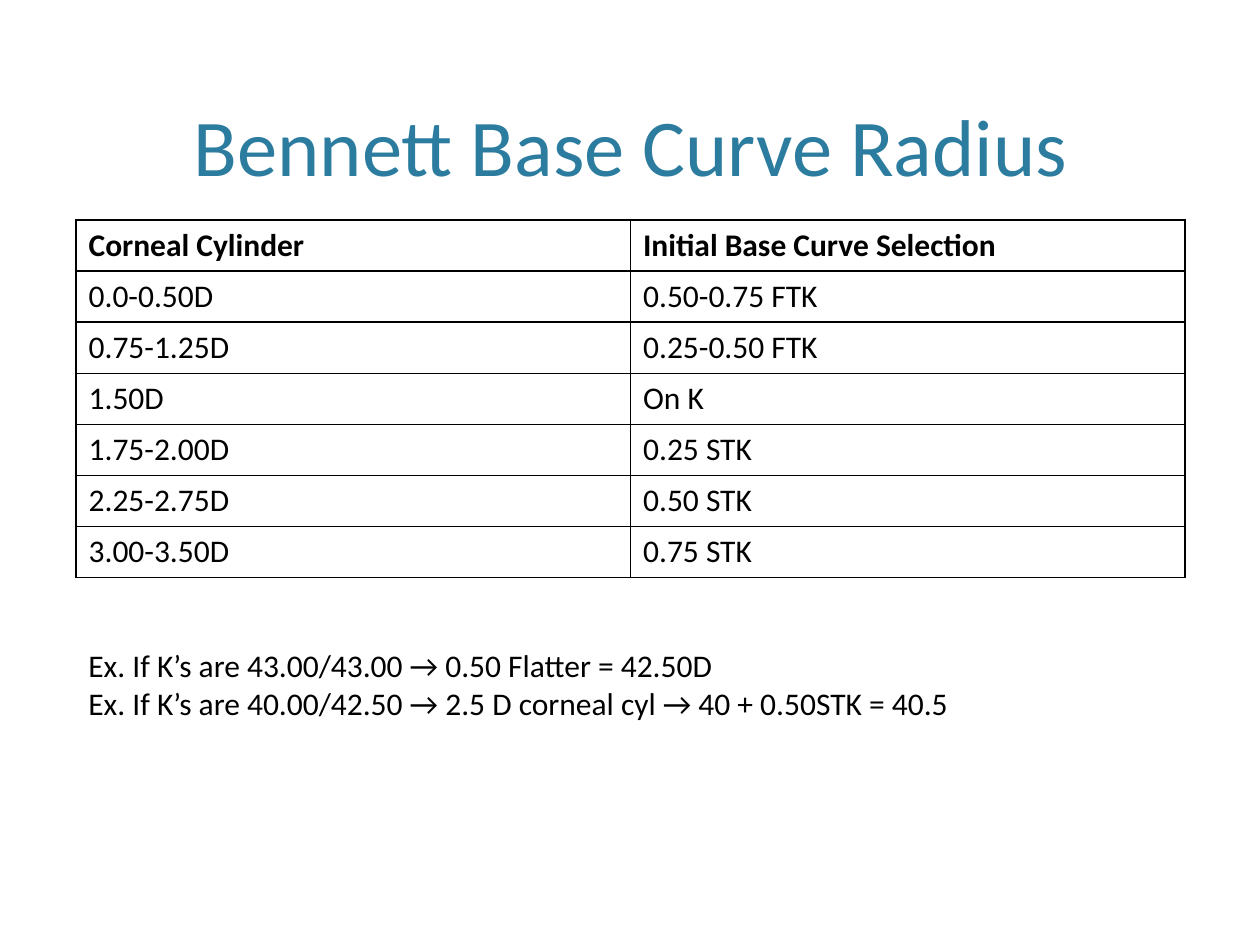
import pptx
import pptx.dml.color
import pptx.enum.text
import pptx.oxml.ns
import pptx.util
from lxml import etree

PX = 914400 / 126
FONT = "Calibri"
COLORS = {"title": "2C7C9F", "text": "000000", "border": "000000"}
ALIGN = pptx.enum.text.PP_ALIGN
ANCHOR = pptx.enum.text.MSO_ANCHOR

ROWS = [
    ("Corneal Cylinder", "Initial Base Curve Selection"),
    ("0.0-0.50D", "0.50-0.75 FTK"),
    ("0.75-1.25D", "0.25-0.50 FTK"),
    ("1.50D", "On K"),
    ("1.75-2.00D", "0.25 STK"),
    ("2.25-2.75D", "0.50 STK"),
    ("3.00-3.50D", "0.75 STK"),
]
EXAMPLES = [
    "Ex. If K’s are 43.00/43.00 → 0.50 Flatter = 42.50D",
    "Ex. If K’s are 40.00/42.50 → 2.5 D corneal cyl → 40 + 0.50STK = 40.5",
]


def px(length):
    return pptx.util.Emu(round(length * PX))


def write_text(frame, lines, size=18, color="text", bold=False,
               align=ALIGN.LEFT, anchor=ANCHOR.TOP):
    frame.word_wrap = True
    frame.vertical_anchor = anchor
    for index, line in enumerate(lines):
        para = frame.add_paragraph() if index else frame.paragraphs[0]
        para.alignment = align
        span = para.add_run()
        span.text = line
        span.font.name = FONT
        span.font.size = pptx.util.Pt(size)
        span.font.bold = bold
        span.font.color.rgb = pptx.dml.color.RGBColor.from_string(COLORS[color])


def add_borders(cell, width=1):
    properties = cell._tc.get_or_add_tcPr()
    qn = pptx.oxml.ns.qn
    for side in ("lnL", "lnR", "lnT", "lnB"):
        line = etree.SubElement(properties, qn(f"a:{side}"), w=str(pptx.util.Pt(width)))
        fill = etree.SubElement(line, qn("a:solidFill"))
        etree.SubElement(fill, qn("a:srgbClr"), val=COLORS["border"])


def place_title(page, left, top, width, height):
    title = page.shapes.title
    title.left, title.top = px(left), px(top)
    title.width, title.height = px(width), px(height)
    write_text(title.text_frame, ["Bennett Base Curve Radius"], size=46,
               color="title", align=ALIGN.CENTER, anchor=ANCHOR.BOTTOM)
    title.text_frame.auto_size = pptx.enum.text.MSO_AUTO_SIZE.NONE


def place_table(page, left, top, width, height):
    box = page.shapes.add_table(len(ROWS), len(ROWS[0]), px(left), px(top),
                                px(width), px(height))
    table = box.table
    table.horz_banding = False
    for row_index, values in enumerate(ROWS):
        for column_index, value in enumerate(values):
            cell = table.cell(row_index, column_index)
            write_text(cell.text_frame, [value], bold=row_index == 0)
            add_borders(cell)
            cell.fill.background()


def place_examples(page, left, top, width, height):
    box = page.shapes.add_textbox(px(left), px(top), px(width), px(height))
    write_text(box.text_frame, EXAMPLES)
    box.text_frame.auto_size = pptx.enum.text.MSO_AUTO_SIZE.SHAPE_TO_FIT_TEXT


def main():
    deck = pptx.Presentation()
    deck.slide_width, deck.slide_height = px(1260), px(945)
    page = deck.slides.add_slide(deck.slide_layouts[5])
    left, width = 76, 1109
    place_title(page, left, 15, width, 184)
    place_table(page, left, 220, width, 358)
    place_examples(page, left, 640, width, 89)
    deck.save("out.pptx")


if __name__ == "__main__":
    main()
